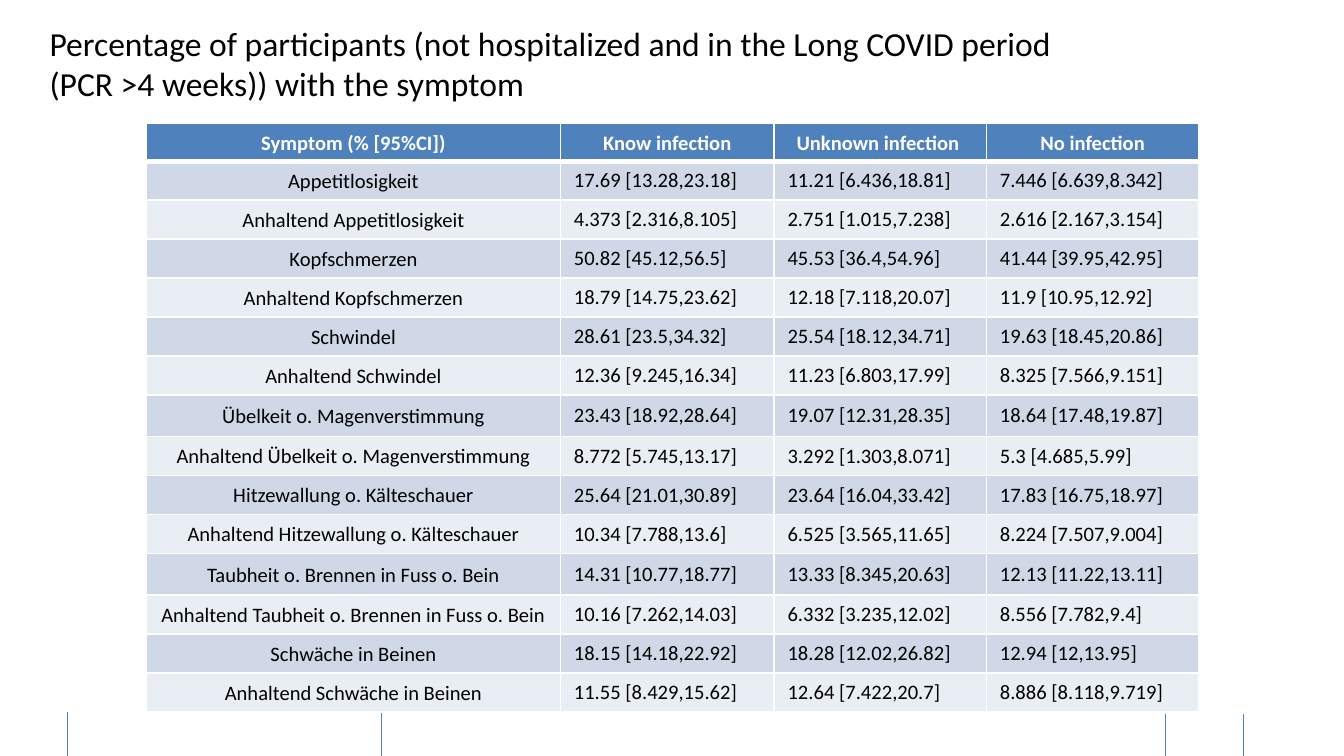
from lxml import etree
from pptx import Presentation
from pptx import util as u
from pptx.dml.color import RGBColor
from pptx.enum import shapes, text
from pptx.oxml.ns import qn

WHITE = RGBColor(0xFF, 0xFF, 0xFF)
BLACK = RGBColor(0, 0, 0)
BLUE = RGBColor(0x4F, 0x81, 0xBD)
BAND_DARK = RGBColor(0xD0, 0xD8, 0xE8)
BAND_LIGHT = RGBColor(0xE9, 0xED, 0xF4)

TITLE = ("Percentage of participants (not hospitalized and in the Long COVID "
         "period (PCR >4 weeks)) with the symptom")
HEADER = ("Symptom (% [95%CI])", "Know infection", "Unknown infection ", "No infection")
ROWS = [
    ("Appetitlosigkeit", "17.69 [13.28,23.18]", "11.21 [6.436,18.81]", "7.446 [6.639,8.342]"),
    ("Anhaltend Appetitlosigkeit", "4.373 [2.316,8.105]", "2.751 [1.015,7.238]", "2.616 [2.167,3.154]"),
    ("Kopfschmerzen", "50.82 [45.12,56.5]", "45.53 [36.4,54.96]", "41.44 [39.95,42.95]"),
    ("Anhaltend Kopfschmerzen", "18.79 [14.75,23.62]", "12.18 [7.118,20.07]", "11.9 [10.95,12.92]"),
    ("Schwindel", "28.61 [23.5,34.32]", "25.54 [18.12,34.71]", "19.63 [18.45,20.86]"),
    ("Anhaltend Schwindel", "12.36 [9.245,16.34]", "11.23 [6.803,17.99]", "8.325 [7.566,9.151]"),
    ("Übelkeit o. Magenverstimmung", "23.43 [18.92,28.64]", "19.07 [12.31,28.35]", "18.64 [17.48,19.87]"),
    ("Anhaltend Übelkeit o. Magenverstimmung", "8.772 [5.745,13.17]", "3.292 [1.303,8.071]", "5.3 [4.685,5.99]"),
    ("Hitzewallung o. Kälteschauer", "25.64 [21.01,30.89]", "23.64 [16.04,33.42]", "17.83 [16.75,18.97]"),
    ("Anhaltend Hitzewallung o. Kälteschauer", "10.34 [7.788,13.6]", "6.525 [3.565,11.65]", "8.224 [7.507,9.004]"),
    ("Taubheit o. Brennen in Fuss o. Bein", "14.31 [10.77,18.77]", "13.33 [8.345,20.63]", "12.13 [11.22,13.11]"),
    ("Anhaltend Taubheit o. Brennen in Fuss o. Bein", "10.16 [7.262,14.03]", "6.332 [3.235,12.02]", "8.556 [7.782,9.4]"),
    ("Schwäche in Beinen", "18.15 [14.18,22.92]", "18.28 [12.02,26.82]", "12.94 [12,13.95]"),
    ("Anhaltend Schwäche in Beinen", "11.55 [8.429,15.62]", "12.64 [7.422,20.7]", "8.886 [8.118,9.719]"),
]
COL_WIDTHS = (3.08, 1.59, 1.58, 1.58)
HEADER_HEIGHT, ROW_HEIGHT = 0.28, 0.29
TALL_ROWS = {7: 0.31, 11: 0.31}
GUIDES = ((8.67, 5.31), (2.84, 5.3), (0.5, 5.3), (9.25, 5.31))
GUIDE_LENGTH = 0.34


def apply_format(target, values):
    for name, value in values.items():
        setattr(target, name, value)


def set_font(font, size, color, bold=False):
    apply_format(font, {"name": "Calibri", "size": u.Pt(size), "bold": bold})
    font.color.rgb = color


def add_guide(s, x, top):
    line = s.shapes.add_connector(shapes.MSO_CONNECTOR.STRAIGHT, u.Inches(x), u.Inches(top),
                                  u.Inches(x), u.Inches(top + GUIDE_LENGTH))
    line.line.color.rgb = BLUE
    line.line.width = u.Pt(0.5)
    etree.SubElement(line._element.spPr, qn("a:effectLst"))


def add_title(s):
    sp = s.shapes.add_textbox(u.Inches(0.27), u.Inches(0.12), u.Inches(8.05), u.Inches(0.71))
    tf = sp.text_frame
    tf.word_wrap = True
    tf.auto_size = text.MSO_AUTO_SIZE.SHAPE_TO_FIT_TEXT
    r = tf.paragraphs[0].add_run()
    r.text = TITLE
    set_font(r.font, 18, BLACK)


def set_borders(cell, widths):
    tc_pr = cell._tc.get_or_add_tcPr()
    for side, width in widths.items():
        ln = etree.SubElement(tc_pr, qn(f"a:ln{side}"), w=str(u.Pt(width)))
        fill = etree.SubElement(ln, qn("a:solidFill"))
        etree.SubElement(fill, qn("a:srgbClr"), val=str(WHITE))


def fill_cell(cell, value, row, col):
    header = row == 0
    set_borders(cell, {"L": 1, "R": 1, "T": 3 if row == 1 else 1, "B": 3 if header else 1})
    cell.fill.solid()
    cell.fill.fore_color.rgb = BLUE if header else (BAND_LIGHT, BAND_DARK)[row % 2]
    cell.vertical_anchor = text.MSO_ANCHOR.MIDDLE
    p = cell.text_frame.paragraphs[0]
    if header or col == 0:
        side, end = (0, 0) if header and col == 3 else (0.03, 0.01)
        apply_format(cell, {"margin_left": u.Inches(side), "margin_right": u.Inches(side),
                            "margin_top": u.Inches(end), "margin_bottom": u.Inches(end)})
        apply_format(p, {"alignment": text.PP_ALIGN.CENTER, "line_spacing": 1.07})
        if col == 0:
            p.space_after = u.Pt(8)
    r = p.add_run()
    r.text = value
    set_font(r.font, 11, WHITE if header else BLACK, header)


def add_symptom_table(s):
    rows = [HEADER] + ROWS
    heights = [HEADER_HEIGHT] + [TALL_ROWS.get(i, ROW_HEIGHT) for i in range(1, len(rows))]
    table = s.shapes.add_table(len(rows), len(HEADER), u.Inches(1.09), u.Inches(0.92),
                               u.Inches(sum(COL_WIDTHS)), u.Inches(sum(heights))).table
    for column, width in zip(table.columns, COL_WIDTHS):
        column.width = u.Inches(width)
    for i, (values, height) in enumerate(zip(rows, heights)):
        table.rows[i].height = u.Inches(height)
        for j, value in enumerate(values):
            fill_cell(table.cell(i, j), value, i, j)


def main():
    prs = Presentation()
    prs.slide_width, prs.slide_height = u.Inches(10), u.Inches(10 * 9 / 16)
    s = prs.slides.add_slide(prs.slide_layouts[6])
    for x, top in GUIDES:
        add_guide(s, x, top)
    add_symptom_table(s)
    add_title(s)
    prs.save("out.pptx")


if __name__ == "__main__":
    main()
